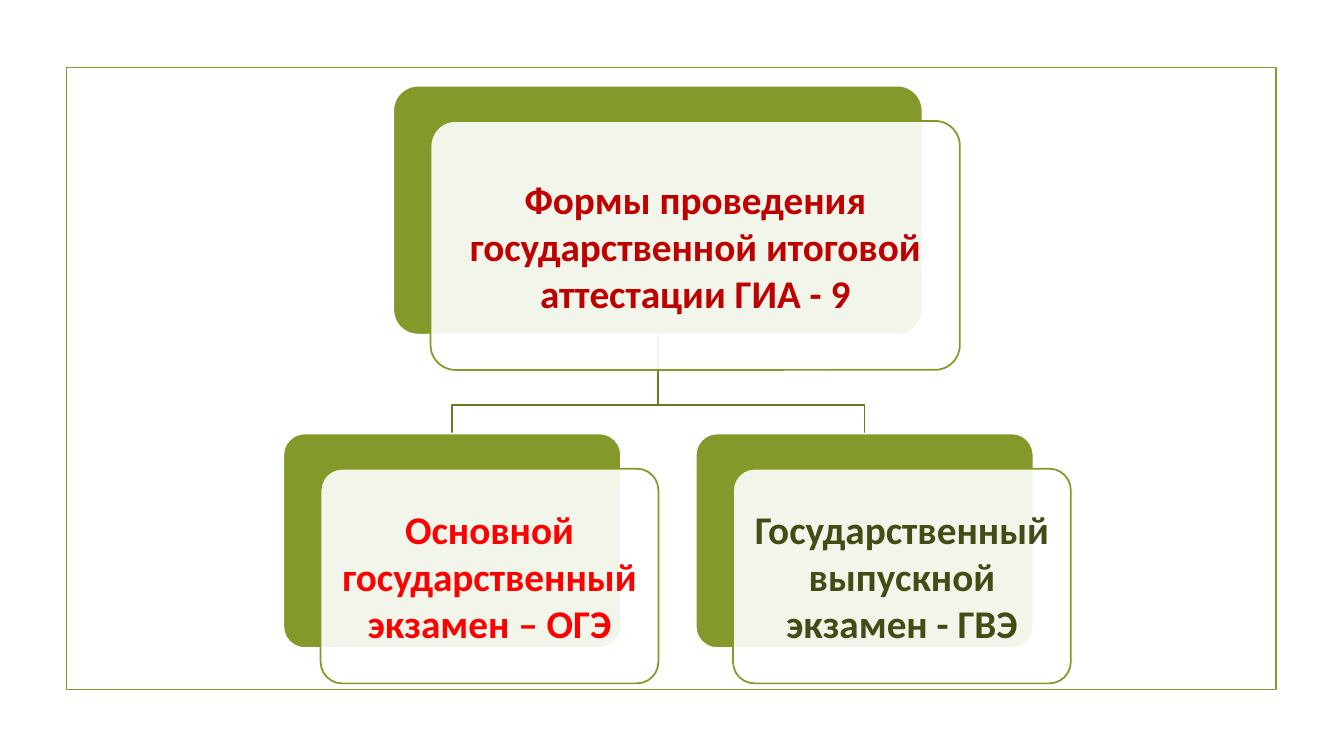
from dataclasses import dataclass

from lxml.etree import SubElement
from pptx import Presentation
from pptx.dml.color import RGBColor
from pptx.enum.shapes import MSO_SHAPE
from pptx.enum.text import MSO_ANCHOR, PP_ALIGN
from pptx.oxml.ns import qn
from pptx.util import Inches, Pt


@dataclass(frozen=True)
class Theme:
    green: str = "83992A"
    connector: str = "697B22"
    white: str = "FFFFFF"
    root_text: str = "C00000"
    main_exam_text: str = "FF0000"
    final_exam_text: str = "414D15"
    font: str = "Calibri"
    text_size: int = 28
    line_width: float = 1.25


@dataclass(frozen=True)
class Node:
    text: str
    color: str
    left: float
    top: float
    width: float
    height: float

    @property
    def center(self):
        return self.left + self.width / 2

    @property
    def bottom(self):
        return self.top + self.height


THEME = Theme()
CARD_OFFSET_X = 0.37
CARD_OFFSET_Y = 0.35
BEND_Y = 4.02
EXAM_TOP, EXAM_WIDTH, EXAM_HEIGHT = 4.3, 3.35, 2.13

ROOT = Node("Формы проведения государственной итоговой аттестации ГИА - 9",
            THEME.root_text, 3.9, 0.85, 5.25, 2.47)
EXAMS = [
    Node("Основной государственный экзамен – ОГЭ",
         THEME.main_exam_text, 2.81, EXAM_TOP, EXAM_WIDTH, EXAM_HEIGHT),
    Node("Государственный выпускной экзамен - ГВЭ",
         THEME.final_exam_text, 6.9, EXAM_TOP, EXAM_WIDTH, EXAM_HEIGHT),
]


def set_outline(shape, color):
    shape.shadow.inherit = False
    shape.line.color.rgb = RGBColor.from_string(color)
    shape.line.width = Pt(THEME.line_width)


def add_frame(slide):
    frame = slide.shapes.add_shape(
        MSO_SHAPE.RECTANGLE, Inches(0.66), Inches(0.67), Inches(12), Inches(6.17))
    frame.fill.background()
    set_outline(frame, THEME.green)


def add_branch(slide, parent, child):
    points = [(parent.center, BEND_Y), (child.center, BEND_Y), (child.center, child.top)]
    builder = slide.shapes.build_freeform(Inches(parent.center), Inches(parent.bottom))
    builder.add_line_segments([(Inches(x), Inches(y)) for x, y in points], close=False)
    branch = builder.convert_to_shape()
    branch.fill.background()
    set_outline(branch, THEME.connector)


def add_card(slide, node, offset_x, offset_y, fill, outline):
    card = slide.shapes.add_shape(
        MSO_SHAPE.ROUNDED_RECTANGLE, Inches(node.left + offset_x),
        Inches(node.top + offset_y), Inches(node.width), Inches(node.height))
    card.adjustments[0] = 0.1
    card.fill.solid()
    card.fill.fore_color.rgb = RGBColor.from_string(fill)
    set_outline(card, outline)
    return card


def set_opacity(shape, percent):
    color = shape.fill._xPr.find(qn("a:solidFill")).find(qn("a:srgbClr"))
    SubElement(color, qn("a:alpha"), val=str(percent * 1000))


def write_text(shape, text, color):
    frame = shape.text_frame
    frame.word_wrap = True
    frame.vertical_anchor = MSO_ANCHOR.MIDDLE
    frame.margin_left = frame.margin_right = Inches(0.06)
    frame.margin_top = frame.margin_bottom = Inches(0.06)
    paragraph = frame.paragraphs[0]
    paragraph.alignment = PP_ALIGN.CENTER
    run = paragraph.add_run()
    run.text = text
    run.font.name = THEME.font
    run.font.size = Pt(THEME.text_size)
    run.font.bold = True
    run.font.color.rgb = RGBColor.from_string(color)


def add_node(slide, node):
    add_card(slide, node, 0, 0, THEME.green, THEME.white)
    front = add_card(slide, node, CARD_OFFSET_X, CARD_OFFSET_Y, THEME.white, THEME.green)
    set_opacity(front, 90)
    write_text(front, node.text, node.color)


def main():
    presentation = Presentation()
    presentation.slide_width = Inches(13.33)
    presentation.slide_height = Inches(7.5)
    slide = presentation.slides.add_slide(presentation.slide_layouts[6])
    add_frame(slide)
    for exam in EXAMS:
        add_branch(slide, ROOT, exam)
    for node in [ROOT, *EXAMS]:
        add_node(slide, node)
    presentation.save("out.pptx")


if __name__ == "__main__":
    main()
